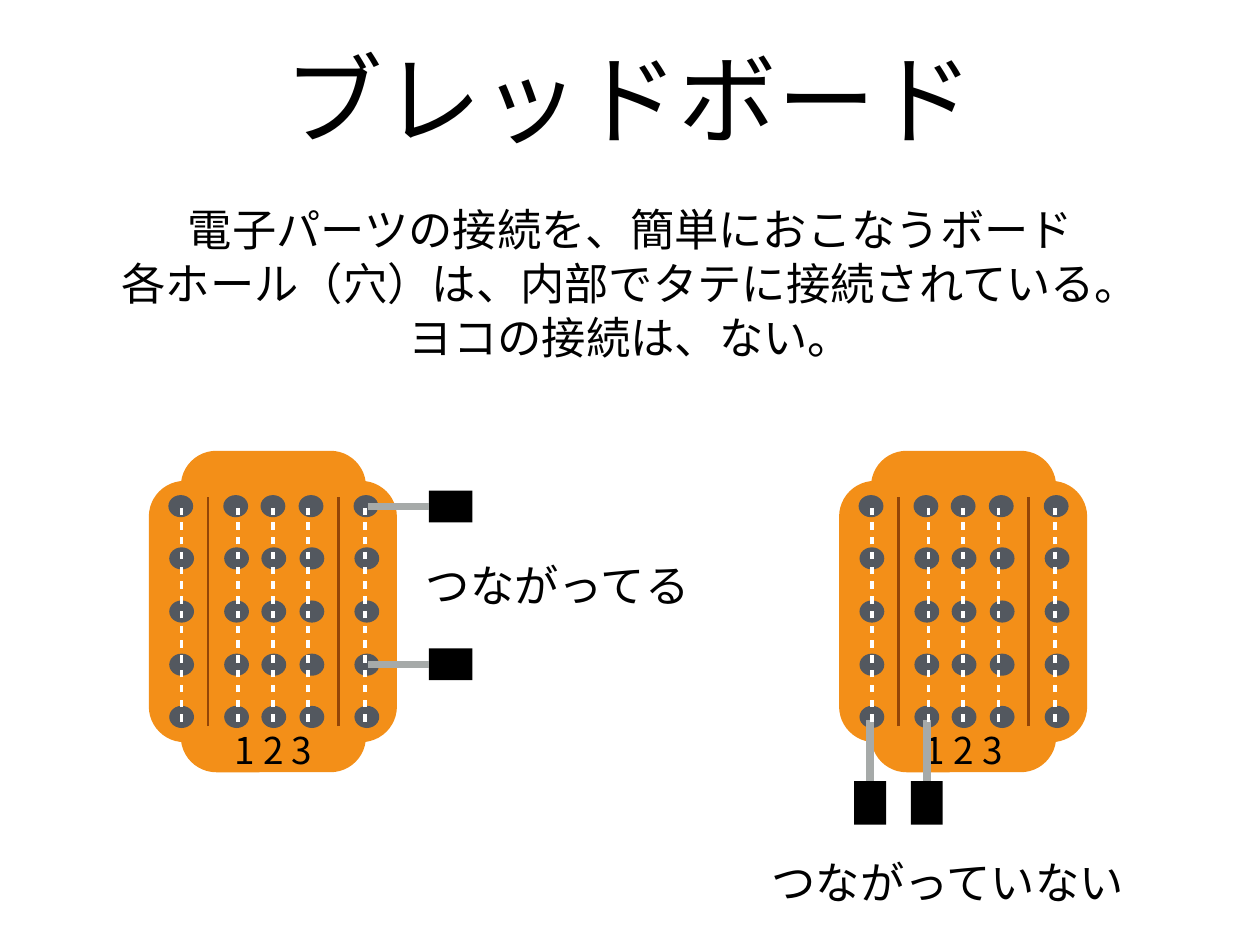
import lxml.etree
import pptx
import pptx.dml.color
import pptx.enum.shapes
import pptx.enum.text
import pptx.oxml.ns
import pptx.util

BLACK = pptx.dml.color.RGBColor(0x00, 0x00, 0x00)
WHITE = pptx.dml.color.RGBColor(0xFF, 0xFF, 0xFF)
ORANGE = pptx.dml.color.RGBColor(0xF3, 0x8F, 0x18)
BROWN = pptx.dml.color.RGBColor(0x92, 0x45, 0x07)
SLATE = pptx.dml.color.RGBColor(0x53, 0x58, 0x5F)
GRAY = pptx.dml.color.RGBColor(0xA6, 0xAA, 0xA9)

SHAPE = pptx.enum.shapes.MSO_SHAPE
FONT = "Noto Sans CJK JP"
SCALE = 9144
TOP, LEFT = 0, 1
BOARD_LEFTS = (168, 947)
HOLE_OFFSETS = (22, 84, 126, 169, 231)
WIRE_OFFSETS = (37, 101, 140, 180, 244)


def px(n):
    return pptx.util.Emu(n * SCALE)


def sub(parent, tag, **attrs):
    return lxml.etree.SubElement(parent, pptx.oxml.ns.qn(tag), **attrs)


class Deck:
    def __init__(self, width, height):
        self.prs = pptx.Presentation()
        self.prs.slide_width, self.prs.slide_height = px(width), px(height)
        self.s = self.prs.slides.add_slide(self.prs.slide_layouts[5])
        self.shapes = self.s.shapes

    def start_group(self):
        self.shapes = self.s.shapes.add_group_shape().shapes

    def end_group(self):
        self.shapes = self.s.shapes

    def fill_text(self, sp, lines, size, wrap, spacing=None):
        tf = sp.text_frame
        tf.text = "\n".join(lines)
        tf.auto_size = pptx.enum.text.MSO_AUTO_SIZE.NONE
        tf.word_wrap = wrap
        tf.vertical_anchor = pptx.enum.text.MSO_ANCHOR.MIDDLE
        tf.margin_left = tf.margin_right = px(6)
        tf.margin_top = tf.margin_bottom = px(6)
        for p in tf.paragraphs:
            p.alignment = pptx.enum.text.PP_ALIGN.CENTER
            if spacing:
                p.line_spacing = pptx.util.Pt(spacing)
            p.font.size = pptx.util.Pt(size)
            p.font.color.rgb = BLACK
            p.font.name = FONT
            props = p._p.pPr.find(pptx.oxml.ns.qn("a:defRPr"))
            sub(props, "a:ea", typeface=FONT)

    def title(self, text, x, y, w, h, size):
        sp = self.s.shapes.title
        sp.left, sp.top, sp.width, sp.height = px(x), px(y), px(w), px(h)
        self.fill_text(sp, [text], size, True)

    def text(self, lines, x, y, w, h, size, wrap=False, spacing=None):
        sp = self.shapes.add_textbox(px(x), px(y), px(w), px(h))
        self.fill_text(sp, lines, size, wrap, spacing)

    def shape(self, kind, x, y, w, h, color, corner=None):
        sp = self.shapes.add_shape(kind, px(x), px(y), px(w), px(h))
        sp.shadow.inherit = False
        sp.fill.solid()
        sp.fill.fore_color.rgb = color
        sp.line.fill.background()
        if corner:
            sp.adjustments[0] = corner
        return sp

    def line(self, x1, y1, x2, y2, color, width, dashed=False):
        cxn = self.shapes.add_connector(
            pptx.enum.shapes.MSO_CONNECTOR.STRAIGHT, px(x1), px(y1), px(x2), px(y2))
        cxn.line.color.rgb = color
        cxn.line.width = pptx.util.Pt(width)
        if dashed:
            dash = sub(cxn.line._get_or_add_ln(), "a:custDash")
            sub(dash, "a:ds", d="200000", sp="200000")
        sub(cxn._element.spPr, "a:effectLst")
        return cxn

    def board(self, x):
        self.start_group()
        self.shape(SHAPE.ROUNDED_RECTANGLE, x, 543, 280, 295, ORANGE, 0.144)
        self.shape(SHAPE.ROUNDED_RECTANGLE, x + 36, 509, 209, 363, ORANGE, 0.192)
        for row in range(5):
            for offset in HOLE_OFFSETS:
                self.shape(SHAPE.OVAL, x + offset + min(row, 1),
                           round(559 + 59.5 * row), 28, 25, SLATE)
        for offset in (67, 214):
            self.line(x + offset, 820, x + offset, 561, BROWN, 2)
        self.text(["1 2 3"], x + 71, 812, 139, 68, 30, wrap=True)
        self.end_group()

    def plug(self, x, y, w, h, side, tip_x, tip_y):
        self.start_group()
        sp = self.shape(SHAPE.RECTANGLE, x, y, w, h, BLACK)
        lead = self.line(x, y, tip_x, tip_y, GRAY, 6)
        lead.begin_connect(sp, side)
        self.end_group()


def main():
    deck = Deck(1422, 1067)
    deck.title("ブレッドボード", 14, 2, 1393, 215, 80)
    for x in BOARD_LEFTS:
        deck.board(x)
    for y in (554, 732):
        deck.plug(484, y, 49, 36, LEFT, 415, y + 18)
    deck.text(["つながってる"], 473, 630, 313, 61, 36)
    for x in (964, 1028):
        deck.plug(x, 882, 36, 49, TOP, x + 18, 813)
    deck.text(["つながっていない"], 863, 965, 413, 61, 36)
    for x in BOARD_LEFTS:
        for offset in WIRE_OFFSETS:
            deck.line(x + offset, 815, x + offset, 574, WHITE, 3, dashed=True)
    deck.text(["電子パーツの接続を、簡単におこなうボード",
               "各ホール（穴）は、内部でタテに接続されている。",
               "ヨコの接続は、ない。"], 124, 213, 1175, 211, 36, spacing=44)
    deck.prs.save("out.pptx")


if __name__ == "__main__":
    main()
